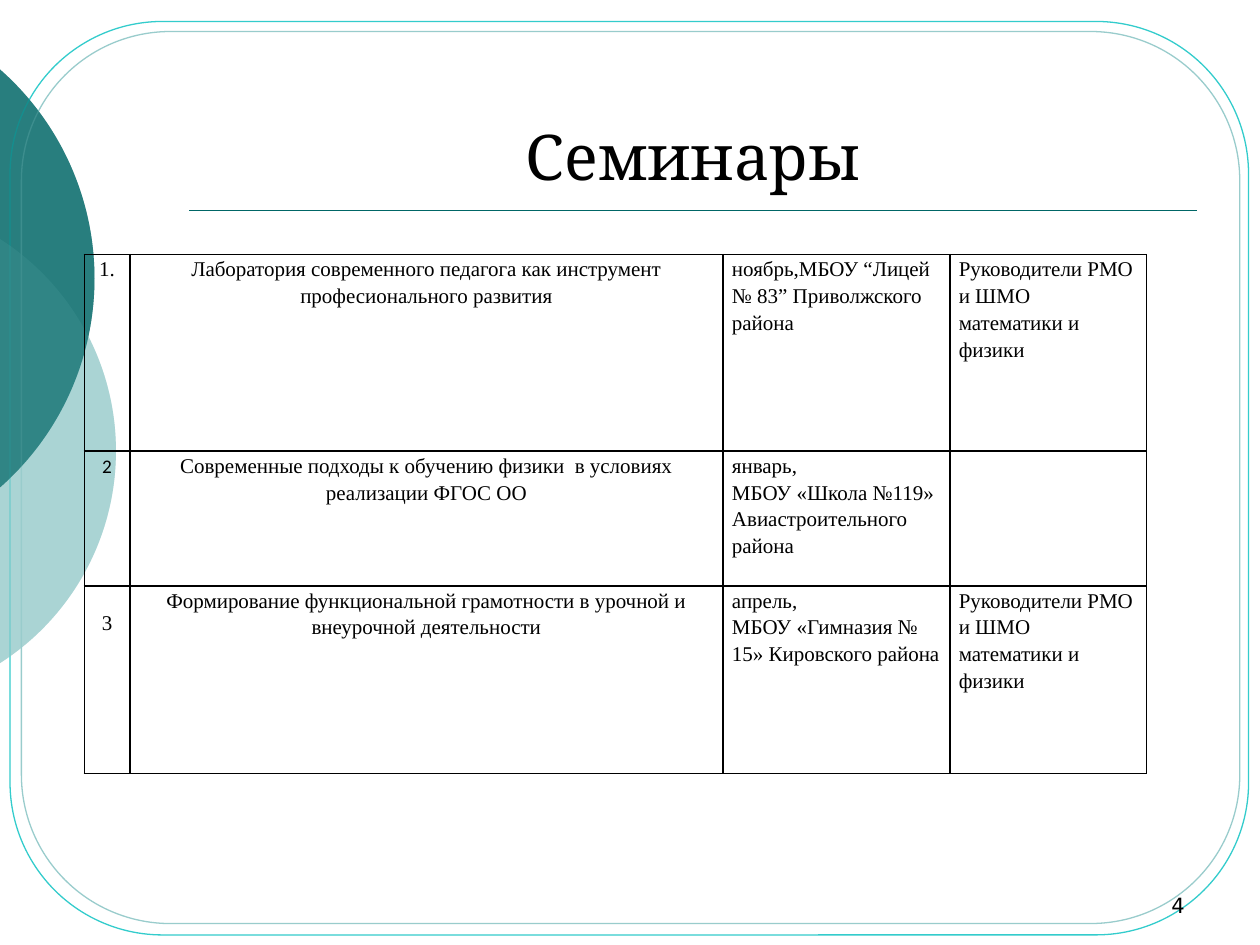
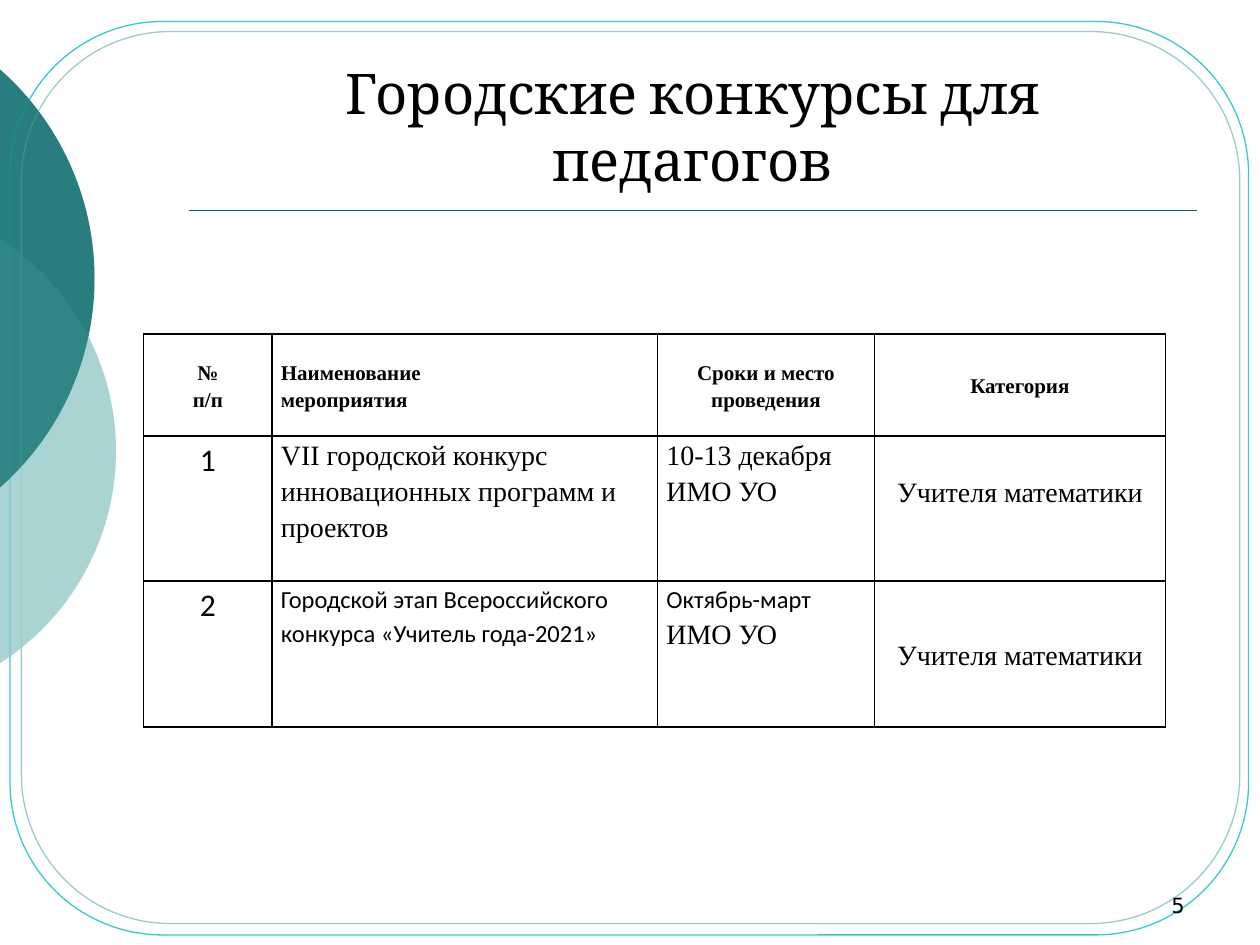
"""Build two slides of a teachers' seminar and contest plan."""
from math import acos, cos, sin, tan

from lxml.etree import SubElement
from pptx import Presentation
from pptx.dml.color import RGBColor
from pptx.enum.shapes import MSO_CONNECTOR, MSO_SHAPE
from pptx.enum.text import MSO_ANCHOR, MSO_AUTO_SIZE, PP_ALIGN
from pptx.oxml.ns import qn
from pptx.util import Inches, Pt

COLOURS = {"dark": "006666", "light": "99CCCC", "bright": "33CCCC", "text": "000000"}
PLAIN_TABLE = "{2D5ABB26-0587-4C30-8999-92F81FD0307C}"

DISCS = [
    {"corner": (-3.08, 1.58), "size": 4, "colour": "light", "opacity": 58},
    {"corner": (-3.67, 0), "size": 4.42, "colour": "dark", "opacity": 60},
]
FRAMES = [((0.08, 0.17, 9.83, 7.25), "bright"), ((0.17, 0.25, 9.67, 7.08), "light")]
RULE = (1.5, 1.67, 9.5, 1.67)
TITLE_AREA = (1.5, 0.33, 8, 1.25)
NUMBER_AREA = (7.17, 6.83, 2.33, 0.5)

SERIF, SANS = "Times New Roman", "Calibri"
STYLES = {
    "small": {"name": SERIF, "size": Pt(12)},
    "small sans": {"name": SANS, "size": Pt(11)},
    "heading": {"name": SERIF, "size": Pt(12), "bold": True},
    "body": {"name": SERIF, "size": Pt(16)},
    "body sans": {"name": SANS, "size": Pt(14)},
    "index": {"name": SANS, "size": Pt(18)},
    "number": {"name": "DejaVu Sans", "size": Pt(12)},
}
LEADERS = ["Руководители РМО и ШМО математики и физики"]
TEACHERS = ["Учителя математики"]

PAGES = [
    {
        "title": "Семинары", "title size": 36, "number": 4,
        "corner": (0.67, 2.02),
        "columns": [0.36, 4.71, 1.8, 1.56],
        "heights": [1.56, 1.07, 1.49],
        "style": "small",
        "centred": {0, 1},
        "margins": {(2, 0): (0.18, 0)},
        "styles": {(1, 0): ["small sans"]},
        "rows": [
            [["1."],
             ["Лаборатория современного педагога как инструмент професионального развития"],
             ["ноябрь,МБОУ “Лицей № 83” Приволжского района"], LEADERS],
            [["2"],
             ["Современные подходы к обучению физики  в условиях реализации ФГОС ОО"],
             ["январь,", "МБОУ «Школа №119» Авиастроительного района"], []],
            [["3"],
             ["Формирование функциональной грамотности в урочной и внеурочной деятельности"],
             ["апрель,", "МБОУ «Гимназия № 15» Кировского района"], LEADERS],
        ],
    },
    {
        "title": "Городские конкурсы для педагогов", "title size": 32, "number": 5,
        "corner": (1.14, 2.65),
        "columns": [1.02, 3.06, 1.72, 2.31],
        "heights": [0.81, 1.15, 1.16],
        "style": "body",
        "centred": {0, 3, (0, 2)},
        "middle": {(0, 0), (0, 1), (0, 2), (0, 3), (1, 3), (2, 3)},
        "margins": {(1, 3): (0, 0.28)},
        "styles": {
            **{(0, column): ["heading", "heading"] for column in range(4)},
            (1, 0): ["index"], (2, 0): ["index"],
            (2, 1): ["body sans"], (2, 2): ["body sans", "body"],
        },
        "rows": [
            [["№", "п/п"], ["Наименование", "мероприятия"],
             ["Сроки и место проведения"], ["Категория"]],
            [["1"], ["VII городской конкурс инновационных программ и проектов"],
             ["10-13 декабря", "ИМО УО"], TEACHERS],
            [["2"], ["Городской этап Всероссийского конкурса «Учитель года-2021»"],
             ["Октябрь-март", "ИМО УО"], TEACHERS],
        ],
    },
]


def colour(name):
    return RGBColor.from_string(COLOURS[name])


def apply(target, values):
    for key, value in values.items():
        setattr(target, key, value)


def write(para, text, font, alignment):
    span = para.add_run()
    span.text = text
    para.alignment = alignment
    apply(span.font, font)
    span.font.color.rgb = colour("text")


def place(shape, area):
    apply(shape, dict(zip(("left", "top", "width", "height"), map(Inches, area))))


def draw_segment(outline, radius, edge):
    """Replace an outline by the part of its circle right of the edge."""
    reach = acos((edge - radius) / radius)
    handle = 4 / 3 * tan(reach / 4) * radius
    x, y = radius * (1 + cos(reach)), radius * sin(reach)
    pull_x, pull_y = handle * sin(reach), handle * cos(reach)
    right = 2 * radius
    steps = [
        ("a:moveTo", [(x, radius - y)]),
        ("a:cubicBezTo", [(x + pull_x, radius - y + pull_y),
                          (right, radius - handle), (right, radius)]),
        ("a:cubicBezTo", [(right, radius + handle),
                          (x + pull_x, radius + y - pull_y), (x, radius + y)]),
        ("a:close", []),
    ]
    for step in list(outline):
        outline.remove(step)
    for tag, points in steps:
        step = SubElement(outline, qn(tag))
        for across, down in points:
            SubElement(step, qn("a:pt"), x=str(Inches(across)), y=str(Inches(down)))


def add_disc(page, disc):
    (left, top), size = disc["corner"], disc["size"]
    builder = page.shapes.build_freeform(Inches(left), Inches(top))
    builder.add_line_segments([(Inches(left + size), Inches(top + size))])
    shape = builder.convert_to_shape()
    draw_segment(next(shape.element.iter(qn("a:path"))), size / 2, -left)
    shape.shadow.inherit = False
    shape.line.fill.background()
    shape.fill.solid()
    shape.fill.fore_color.rgb = colour(disc["colour"])
    tint = shape.element.spPr.find(qn("a:solidFill"))[0]
    SubElement(tint, qn("a:alpha"), val=str(disc["opacity"] * 1000))


def add_frame(page, area, line_colour):
    frame = page.shapes.add_shape(MSO_SHAPE.ROUNDED_RECTANGLE, *map(Inches, area))
    frame.adjustments[0] = 0.167
    frame.shadow.inherit = False
    frame.fill.background()
    frame.line.color.rgb = colour(line_colour)
    frame.line.width = Pt(0.75)


def add_rule(page):
    rule = page.shapes.add_connector(MSO_CONNECTOR.STRAIGHT, *map(Inches, RULE))
    rule.line.color.rgb = colour("dark")
    rule.line.width = Pt(1)
    SubElement(rule.element.spPr, qn("a:effectLst"))


def decorate(layout, page):
    """Draw the shared backdrop on a page and move it to the layout."""
    kept = {shape.shape_id for shape in page.shapes}
    for disc in DISCS:
        add_disc(page, disc)
    for area, line_colour in FRAMES:
        add_frame(page, area, line_colour)
    add_rule(page)
    for disc in DISCS:
        add_disc(page, disc)
    for shape in list(page.shapes):
        if shape.shape_id not in kept:
            layout.shapes.element.append(shape.element)


def add_borders(cell):
    properties = cell._tc.get_or_add_tcPr()
    for position, side in enumerate(("a:lnL", "a:lnR", "a:lnT", "a:lnB")):
        line = SubElement(properties, qn(side), w=str(Pt(1)))
        fill = SubElement(line, qn("a:solidFill"))
        SubElement(fill, qn("a:srgbClr"), val=COLOURS["text"])
        properties.insert(position, line)


def fill_cell(cell, content, key, texts):
    middle = key in content.get("middle", ())
    top, bottom = content["margins"].get(key, (0, 0))
    apply(cell, {
        "margin_left": Inches(0.07), "margin_right": Inches(0.07),
        "margin_top": Inches(top), "margin_bottom": Inches(bottom),
        "vertical_anchor": MSO_ANCHOR.MIDDLE if middle else MSO_ANCHOR.TOP,
    })
    cell.fill.background()
    add_borders(cell)
    centred = key in content["centred"] or key[1] in content["centred"]
    alignment = PP_ALIGN.CENTER if centred else PP_ALIGN.LEFT
    names = content["styles"].get(key, [content["style"]] * len(texts))
    frame = cell.text_frame
    for index, (text, name) in enumerate(zip(texts, names)):
        para = frame.add_paragraph() if index else frame.paragraphs[0]
        para.line_spacing = 1.15
        write(para, text, STYLES[name], alignment)


def add_plan(page, content):
    columns, heights = content["columns"], content["heights"]
    area = (*content["corner"], sum(columns), sum(heights))
    table = page.shapes.add_table(len(heights), len(columns), *map(Inches, area)).table
    apply(table, {"first_row": False, "horz_banding": False})
    table._tbl.tblPr.find(qn("a:tableStyleId")).text = PLAIN_TABLE
    for column, width in zip(table.columns, columns):
        column.width = Inches(width)
    for row, height in zip(table.rows, heights):
        row.height = Inches(height)
    for row_index, row in enumerate(content["rows"]):
        for column_index, texts in enumerate(row):
            key = (row_index, column_index)
            fill_cell(table.cell(*key), content, key, texts)


def add_title(page, content):
    title = page.shapes.title
    place(title, TITLE_AREA)
    frame = title.text_frame
    apply(frame, {"vertical_anchor": MSO_ANCHOR.BOTTOM, "word_wrap": True,
                  "auto_size": MSO_AUTO_SIZE.NONE})
    font = {"name": "Cambria", "size": Pt(content["title size"])}
    write(frame.paragraphs[0], content["title"], font, PP_ALIGN.CENTER)


def add_number(page, number):
    frame = page.shapes.add_textbox(*map(Inches, NUMBER_AREA)).text_frame
    apply(frame, {"vertical_anchor": MSO_ANCHOR.BOTTOM, "word_wrap": True})
    write(frame.paragraphs[0], str(number), STYLES["number"], PP_ALIGN.RIGHT)


def main():
    deck = Presentation()
    apply(deck, {"slide_width": Inches(10), "slide_height": Inches(7.5)})
    layout = deck.slide_layouts[5]
    for index, content in enumerate(PAGES):
        page = deck.slides.add_slide(layout)
        if index == 0:
            decorate(layout, page)
        add_title(page, content)
        add_number(page, content["number"])
        add_plan(page, content)
    deck.save("out.pptx")


if __name__ == "__main__":
    main()
